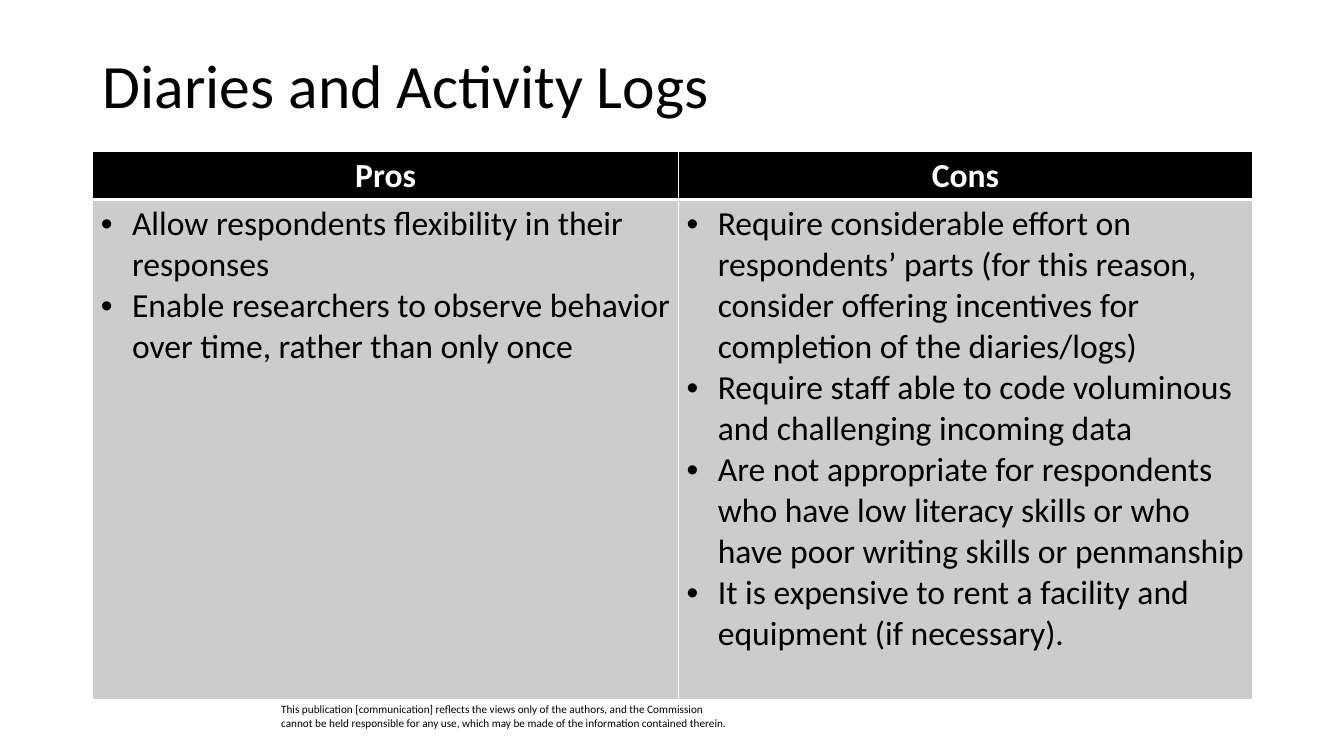
from lxml.etree import SubElement
from pptx import Presentation
from pptx.dml.color import RGBColor
from pptx.enum.text import MSO_ANCHOR, MSO_AUTO_SIZE, PP_ALIGN
from pptx.oxml.ns import qn
from pptx.util import Inches, Pt

COLORS = {"text": "000000", "header": "000000", "body": "CCCCCC", "light": "FFFFFF"}
FONT = "Calibri"
CELL = 0.1  # inches per grid column and row
TITLE_ONLY = 5

PROS = [
    "Allow respondents flexibility in their responses",
    "Enable researchers to observe behavior over time, rather than only once",
]
CONS = [
    "Require considerable effort on respondents’ parts (for this reason, consider "
    "offering incentives for completion of the diaries/logs)",
    "Require staff able to code voluminous and challenging incoming data",
    "Are not appropriate for respondents who have low literacy skills or who have "
    "poor writing skills or penmanship",
    "It is expensive to rent a facility and equipment (if necessary).",
]
DISCLAIMER = (
    "This publication [communication] reflects the views only of the authors, and the "
    "Commission cannot be held responsible for any use, which may be made of the "
    "information contained therein."
)


def grid(*units):
    return [Inches(unit * CELL) for unit in units]


def add_bullet(para):
    properties = para._p.get_or_add_pPr()
    properties.set("marL", str(Inches(0.31)))
    properties.set("indent", str(-Inches(0.31)))
    SubElement(properties, qn("a:buFont"), typeface="Arial")
    SubElement(properties, qn("a:buChar"), char="•")


def add_borders(cell, top, bottom):
    """Draw light cell edges; top and bottom are widths in points."""
    properties = cell._tc.get_or_add_tcPr()
    for side, width in (("L", 1), ("R", 1), ("T", top), ("B", bottom)):
        line = SubElement(properties, qn(f"a:ln{side}"), w=str(Pt(width)))
        fill = SubElement(line, qn("a:solidFill"))
        SubElement(fill, qn("a:srgbClr"), val=COLORS["light"])


class Page:
    def __init__(self, deck):
        self.slide = deck.slides.add_slide(deck.slide_layouts[TITLE_ONLY])

    def style(self, frame, size, color="text", bold=False, align=PP_ALIGN.LEFT):
        for para in frame.paragraphs:
            para.alignment = align
            for span in para.runs:
                span.font.name = FONT
                span.font.size = Pt(size)
                span.font.bold = bold
                span.font.color.rgb = RGBColor.from_string(COLORS[color])

    def title(self, text, place):
        box = self.slide.shapes.title
        box.left, box.top, box.width, box.height = grid(*place)
        frame = box.text_frame
        frame.text = text
        frame.auto_size = MSO_AUTO_SIZE.NONE
        frame.vertical_anchor = MSO_ANCHOR.MIDDLE
        frame.paragraphs[0].line_spacing = 0.9
        self.style(frame, 44)

    def note(self, text, place):
        frame = self.slide.shapes.add_textbox(*grid(*place)).text_frame
        frame.word_wrap = True
        frame.text = text
        self.style(frame, 8)

    def comparison(self, lists, place, widths, heights):
        """Add a table with one headed column of bullets per list."""
        table = self.slide.shapes.add_table(2, len(lists), *grid(*place)).table
        for row, height in zip(table.rows, grid(*heights)):
            row.height = height
        for index, (heading, points) in enumerate(lists.items()):
            table.columns[index].width = grid(widths[index])[0]
            self.cell(table.cell(0, index), heading, "header", (1, 3),
                      color="light", bold=True, align=PP_ALIGN.CENTER)
            body = table.cell(1, index)
            self.cell(body, "\n".join(points), "body", (3, 1))
            for para in body.text_frame.paragraphs:
                add_bullet(para)

    def cell(self, cell, text, fill, edges, **look):
        cell.margin_left = cell.margin_right = Inches(0.08)
        cell.margin_top = cell.margin_bottom = Inches(0.04)
        cell.text_frame.text = text
        self.style(cell.text_frame, 24, **look)
        add_borders(cell, *edges)
        cell.fill.solid()
        cell.fill.fore_color.rgb = RGBColor.from_string(COLORS[fill])


def main():
    deck = Presentation()
    deck.slide_width, deck.slide_height = Inches(13.33), Inches(7.5)
    page = Page(deck)
    page.note(DISCLAIMER, (26.9, 69.2, 46.4, 3.7))
    page.title("Diaries and Activity Logs", (9.2, 4, 115, 9.6))
    page.comparison({"Pros": PROS, "Cons": CONS}, (9.2, 15, 115, 54.4),
                    widths=(58.1, 56.9), heights=(4.8, 49.6))
    deck.save("out.pptx")


if __name__ == "__main__":
    main()
